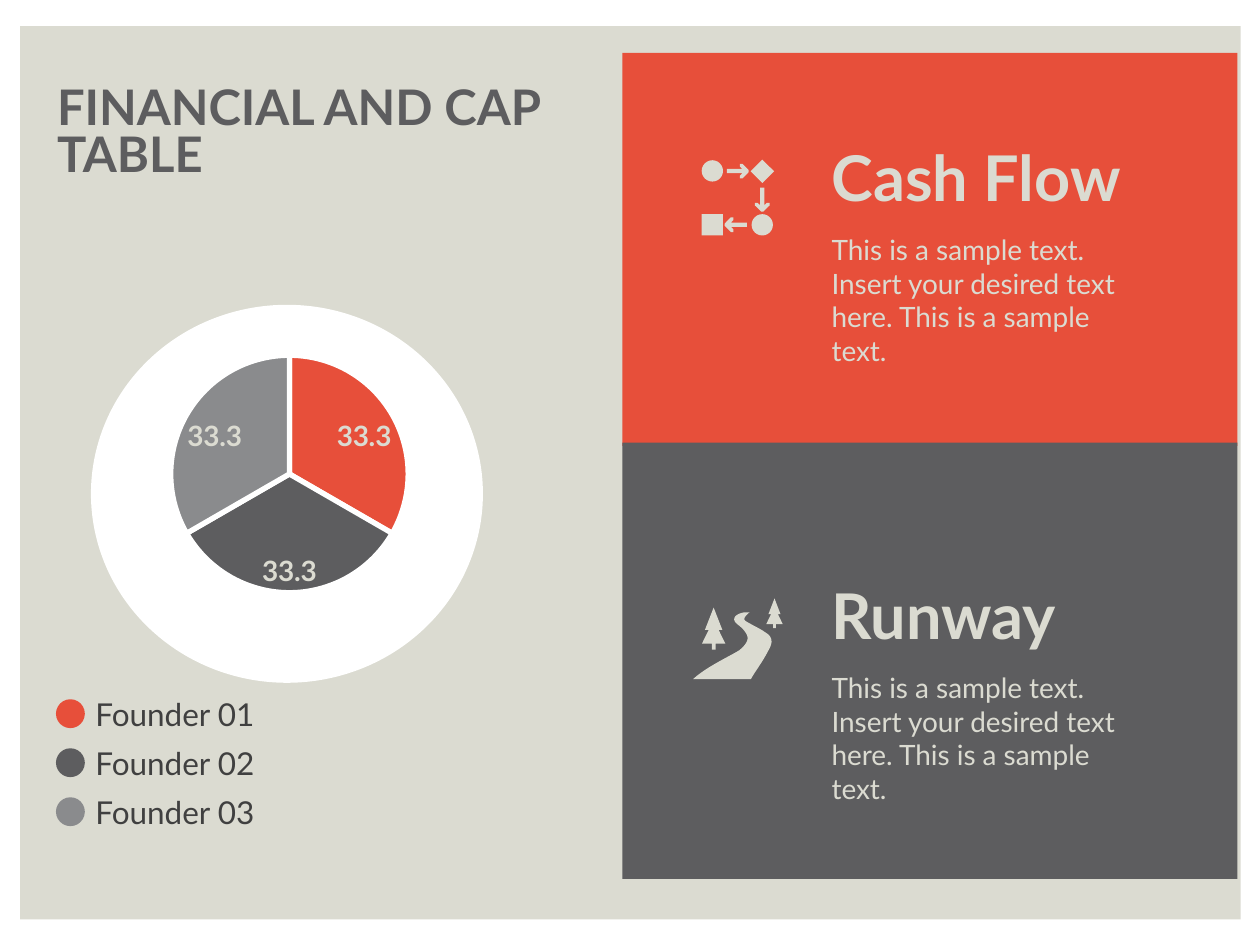
from dataclasses import dataclass

from lxml.etree import SubElement
from pptx import Presentation
from pptx.chart.data import CategoryChartData
from pptx.dml.color import RGBColor
from pptx.enum.chart import XL_CHART_TYPE, XL_LABEL_POSITION
from pptx.enum.shapes import MSO_SHAPE
from pptx.enum.text import MSO_ANCHOR, MSO_AUTO_SIZE, PP_ALIGN
from pptx.oxml import parse_xml
from pptx.oxml.ns import nsdecls, qn
from pptx.util import Pt


@dataclass(frozen=True)
class Theme:
    font: str = "Lato"
    white: str = "FFFFFF"
    sand: str = "DBDBD1"
    red: str = "E74F3A"
    dark: str = "5D5D5F"
    grey: str = "8A8B8D"
    ink: str = "404040"
    title: int = 28
    heading: int = 36
    legend: int = 18
    body: int = 16


THEME = Theme()
FOUNDERS = (
    ("Founder 01", THEME.red),
    ("Founder 02", THEME.dark),
    ("Founder 03", THEME.grey),
)
SAMPLE = ("This is a sample text. Insert your desired text here. "
          "This is a sample text.")
ARROW_HEAD = ((0, 0.6), (-3.5, 4.2), (-5, 4.2), (-5, 2.7), (-3.6, 1.2))
TREE_HALF = ((0, 0), (0.37, 0.53), (0.21, 0.53), (0.5, 0.86),
             (0.08, 0.86), (0.08, 1))
ROAD_START = (426.2, 355)
ROAD = (
    (428.4, 356.4, 435.6, 360, 436.3, 360.7),
    (438.5, 362.2, 443.5, 364.3, 439.2, 371.5),
    (435.6, 378.7, 431.3, 383.8, 429.1, 388.1),
    (396, 388.1),
    (403.9, 380.9, 416.9, 375.1, 422.6, 371.5),
    (427.7, 367.2, 428.4, 364.3, 425.5, 360.7),
    (423.4, 357.8, 421.2, 357.1, 419.8, 355),
    (418.3, 351.4, 424.1, 349.9, 426.2, 349.9),
    (428.4, 349.9),
    (428.4, 349.9, 423.4, 353.5, 426.2, 355),
)


def color(value):
    return RGBColor.from_string(value)


def paint(shape, fill):
    shape.shadow.inherit = False
    shape.fill.solid()
    shape.fill.fore_color.rgb = color(fill)
    shape.line.fill.background()


def add_block(slide, preset, box, fill):
    block = slide.shapes.add_shape(preset, *map(Pt, box))
    paint(block, fill)


def add_outline(slide, points, fill):
    corners = [(Pt(x), Pt(y)) for x, y in points]
    builder = slide.shapes.build_freeform(*corners[0], scale=1.0)
    builder.add_line_segments(corners[1:], close=True)
    paint(builder.convert_to_shape(), fill)


def style_font(font, size, fill, bold=False):
    font.name = THEME.font
    font.size = Pt(size)
    font.bold = bold
    font.color.rgb = color(fill)


def write(frame, text, *, size, fill, bold=False, anchor=MSO_ANCHOR.TOP,
          spacing=None):
    frame.word_wrap = True
    frame.auto_size = MSO_AUTO_SIZE.NONE
    frame.vertical_anchor = anchor
    frame.margin_left = frame.margin_right = 0
    frame.margin_top = frame.margin_bottom = 0
    paragraph = frame.paragraphs[0]
    paragraph.alignment = PP_ALIGN.LEFT
    paragraph.line_spacing = spacing
    run = paragraph.add_run()
    run.text = text
    style_font(run.font, size, fill, bold)


def add_text(slide, box, text, **style):
    write(slide.shapes.add_textbox(*map(Pt, box)).text_frame, text, **style)


def add_title(slide, box, text, **style):
    title = slide.shapes.title
    title.left, title.top, title.width, title.height = map(Pt, box)
    write(title.text_frame, text, **style)


def place_plot(chart, **layout):
    plot_area = chart._chartSpace.chart.plotArea
    for previous in plot_area.findall(qn("c:layout")):
        plot_area.remove(previous)
    element = parse_xml(f"<c:layout {nsdecls('c')}><c:manualLayout/></c:layout>")
    settings = {"layoutTarget": "inner", "xMode": "edge", "yMode": "edge"}
    for tag, value in (settings | layout).items():
        SubElement(element[0], qn(f"c:{tag}")).set("val", str(value))
    plot_area.insert(0, element)


def add_cap_pie(slide, box):
    shares = CategoryChartData()
    shares.categories = ["1", "2", "3"]
    shares.add_series("Series 1", [33.3] * len(FOUNDERS))
    chart = slide.shapes.add_chart(
        XL_CHART_TYPE.PIE, *map(Pt, box), shares).chart
    chart.has_title = False
    chart.has_legend = False
    style_font(chart.font, 10, "000000")
    place_plot(chart, x=0.19, y=0.12, w=0.63, h=0.65)
    plot = chart.plots[0]
    plot.vary_by_categories = True
    for index, (_, fill) in enumerate(FOUNDERS):
        slice_format = plot.series[0].points[index].format
        slice_format.fill.solid()
        slice_format.fill.fore_color.rgb = color(fill)
        slice_format.line.color.rgb = color(THEME.white)
        slice_format.line.width = Pt(3)
    plot.has_data_labels = True
    labels = plot.data_labels
    labels.show_value = True
    labels.show_percentage = False
    labels.position = XL_LABEL_POSITION.BEST_FIT
    style_font(labels.font, THEME.body, THEME.sand, bold=True)


def add_legend(slide, top, step):
    for index, (name, fill) in enumerate(FOUNDERS):
        y = top + index * step
        add_block(slide, MSO_SHAPE.OVAL, (32, y, 16.5, 16.5), fill)
        add_text(slide, (54.5, y - 5.8, 92, 28), name, size=THEME.legend,
                 fill=THEME.ink, anchor=MSO_ANCHOR.MIDDLE)


def add_panel(slide, top, height, fill, heading, heading_top):
    add_block(slide, MSO_SHAPE.RECTANGLE, (355.7, top, 351.4, height), fill)
    add_text(slide, (475.2, heading_top, 182, 30), heading,
             size=THEME.heading, fill=THEME.sand, bold=True,
             anchor=MSO_ANCHOR.MIDDLE)
    add_text(slide, (475.2, heading_top + 47.2, 182, 70), SAMPLE,
             size=THEME.body, fill=THEME.sand)


def add_arrow(slide, tip, direction, length):
    lower = ARROW_HEAD + ((-length, 1.2),)
    outline = lower + tuple((x, -y) for x, y in reversed(lower))
    (tip_x, tip_y), (dx, dy) = tip, direction
    add_outline(slide, [(tip_x + x * dx - y * dy, tip_y + x * dy + y * dx)
                        for x, y in outline], THEME.sand)


def add_flow_icon(slide):
    nodes = (
        (MSO_SHAPE.OVAL, 407.1, 97.7, 12.2),
        (MSO_SHAPE.DIAMOND, 435.6, 97.9, 13.4),
        (MSO_SHAPE.OVAL, 435.6, 128.5, 12.2),
        (MSO_SHAPE.RECTANGLE, 407.1, 128.5, 12.2),
    )
    for preset, x, y, size in nodes:
        add_block(slide, preset, (x - size / 2, y - size / 2, size, size),
                  THEME.sand)
    add_arrow(slide, (427.8, 97.8), (1, 0), 12.4)
    add_arrow(slide, (435.6, 120.9), (0, 1), 13.7)
    add_arrow(slide, (414.1, 128.4), (-1, 0), 12.6)


def add_tree(slide, center, top, width, height):
    outline = TREE_HALF + tuple((-x, y) for x, y in reversed(TREE_HALF[1:]))
    add_outline(slide, [(center + x * width, top + y * height)
                        for x, y in outline], THEME.sand)


def trace(start, segments, steps=12):
    points = [start]
    for segment in segments:
        if len(segment) == 2:
            points.append(segment)
            continue
        knots = (points[-1], segment[:2], segment[2:4], segment[4:])
        for step in range(1, steps + 1):
            t = step / steps
            weights = ((1 - t) ** 3, 3 * t * (1 - t) ** 2,
                       3 * t * t * (1 - t), t ** 3)
            points.append(tuple(sum(w * knot[axis] for w, knot
                                    in zip(weights, knots))
                                for axis in (0, 1)))
    return points


def main():
    deck = Presentation()
    deck.slide_width, deck.slide_height = Pt(720), Pt(540)
    slide = deck.slides.add_slide(deck.slide_layouts[5])
    slide.background.fill.solid()
    slide.background.fill.fore_color.rgb = color(THEME.white)
    add_block(slide, MSO_SHAPE.RECTANGLE, (11.5, 15, 697.5, 510.4), THEME.sand)
    slide.shapes._spTree.append(slide.shapes.title._element)
    add_title(slide, (32.6, 50.4, 306, 152.6), "FINANCIAL AND CAP TABLE",
              size=THEME.title, fill=THEME.dark, bold=True, spacing=0.8)
    add_block(slide, MSO_SHAPE.OVAL, (52, 174.2, 224, 216), THEME.white)
    add_cap_pie(slide, (56, 178, 216.7, 208.8))
    add_legend(slide, top=399.6, step=28)
    add_panel(slide, 30.2, 224.6, THEME.red, "Cash Flow", 85.8)
    add_flow_icon(slide)
    add_panel(slide, 252.9, 249.3, THEME.dark, "Runway", 336)
    add_tree(slide, 407.8, 347.2, 13.4, 24)
    add_tree(slide, 442.6, 342, 9.4, 17)
    add_outline(slide, trace(ROAD_START, ROAD), THEME.sand)
    deck.save("out.pptx")


if __name__ == "__main__":
    main()
